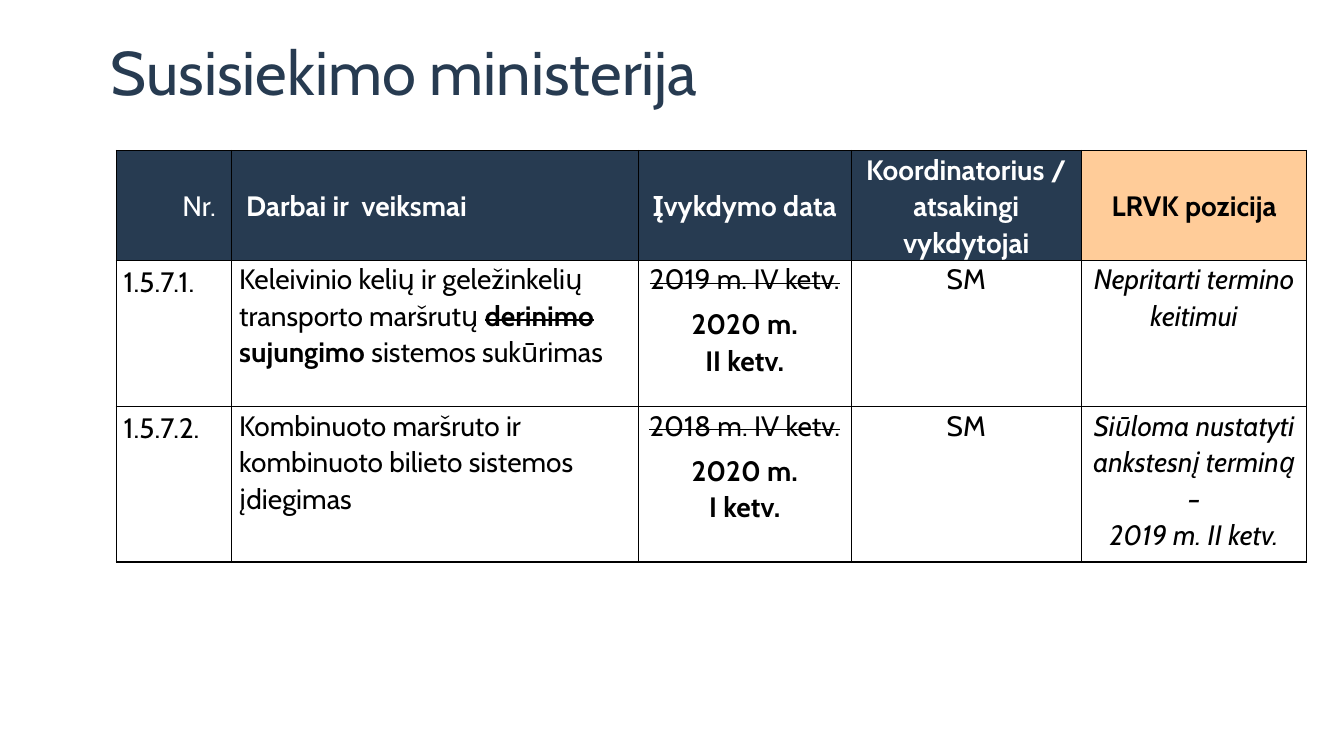
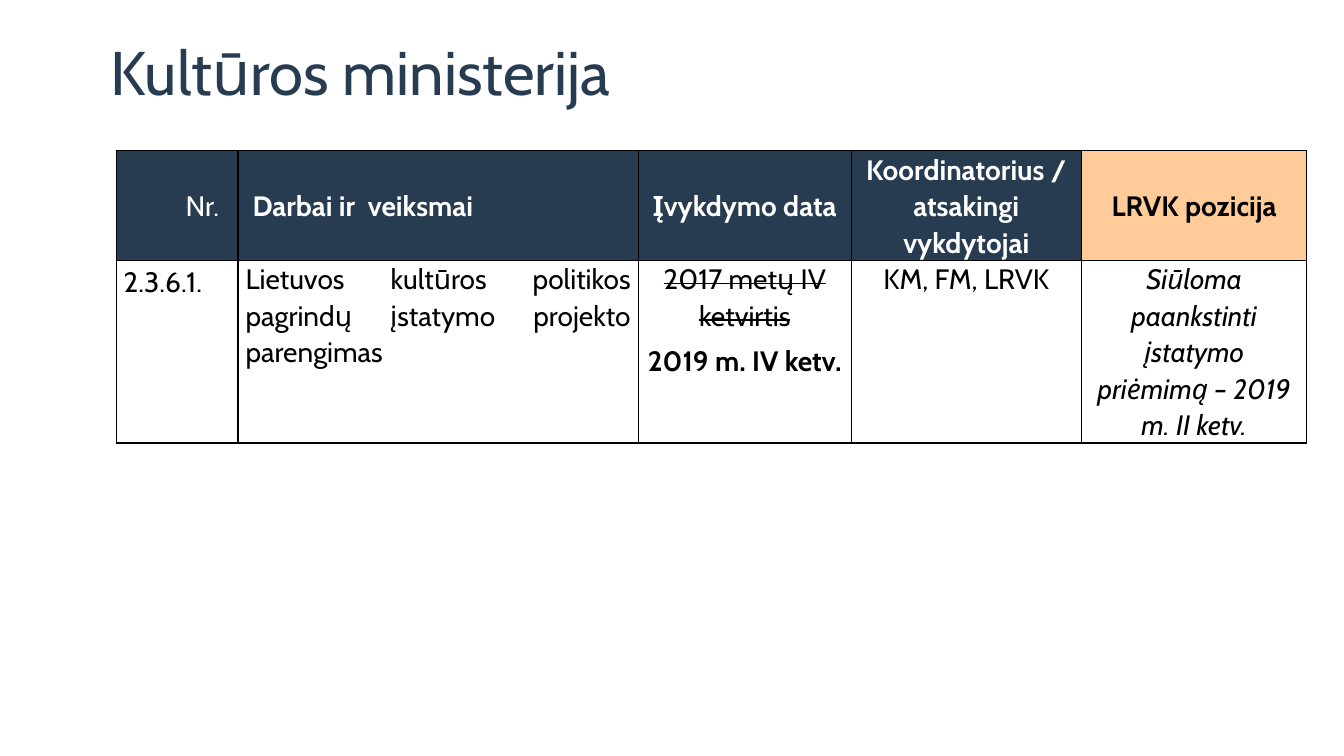
from lxml import etree
from pptx import Presentation
from pptx.dml.color import RGBColor
from pptx.enum.text import MSO_ANCHOR, MSO_AUTO_SIZE, PP_ALIGN
from pptx.oxml.ns import qn
from pptx.util import Pt

LEFT, CENTER, JUSTIFY = PP_ALIGN.LEFT, PP_ALIGN.CENTER, PP_ALIGN.JUSTIFY
TOP, MIDDLE = MSO_ANCHOR.TOP, MSO_ANCHOR.MIDDLE

# Shared style, lengths in points
FONT = "Cabin"
NAVY, PEACH, WHITE, BLACK = "273B51", "FFCC99", "FFFFFF", "000000"
TITLE_BOX = {"left": 72, "top": 22, "width": 816, "height": 64}
TITLE_SIZE, TEXT_SIZE = 44, 20
TABLE_LEFT, TABLE_TOP = 83, 107.5
HEADER_HEIGHT = 78.5
LAST_WIDTHS = [152, 164.5, 161]
CELL_MARGINS = {"margin_left": 5.4, "margin_right": 5.4,
                "margin_top": 0, "margin_bottom": 0}
BORDER_WIDTH = 1
LINE_SPACING, NUMBER_SPACING = 1.07, 1.15
PARAGRAPH_GAP = 6

# Run formats
PLAIN, BOLD, ITALIC = {}, {"bold": True}, {"italic": True}
STRUCK = {"strike": True}
BOLD_STRUCK = {"bold": True, "strike": True}

# Header cells: text, run format, alignment, indent, text colour, fill
HEADERS = [
    ("Nr.", PLAIN, CENTER, 36, WHITE, NAVY),
    ("Darbai ir  veiksmai", BOLD, LEFT, 5, WHITE, NAVY),
    ("Įvykdymo data", BOLD, CENTER, 0, WHITE, NAVY),
    ("Koordinatorius / atsakingi vykdytojai", BOLD, CENTER, 0, WHITE, NAVY),
    ("LRVK pozicija", BOLD, CENTER, 0, BLACK, PEACH),
]

# Body cells are lists of paragraphs, and paragraphs are lists of runs
SLIDES = [
    {
        "title": "Susisiekimo ministerija",
        "first_widths": [82.5, 290.5],
        "task_align": LEFT,
        "date_gap": 0,
        "rows": [
            (104.5, [
                [[("1.5.7.1.", PLAIN)]],
                [[("Keleivinio kelių ir geležinkelių transporto maršrutų ", PLAIN),
                  ("derinimo", BOLD_STRUCK),
                  (" sujungimo", BOLD),
                  (" sistemos sukūrimas", PLAIN)]],
                [[("2019 m. IV ketv.", STRUCK)],
                 [("2020 m.", BOLD)],
                 [("II ketv.", BOLD)]],
                [[("SM", PLAIN)]],
                [[("Nepritarti termino keitimui", ITALIC)]],
            ]),
            (111, [
                [[("1.5.7.2.", PLAIN)]],
                [[("Kombinuoto maršruto ir kombinuoto bilieto sistemos įdiegimas",
                   PLAIN)]],
                [[("2018 m. IV ketv.", STRUCK)],
                 [("2020 m.", BOLD)],
                 [("I ketv.", BOLD)]],
                [[("SM", PLAIN)]],
                [[("Siūloma nustatyti ankstesnį terminą –", ITALIC)],
                 [("2019 m. II ketv.", ITALIC)]],
            ]),
        ],
    },
    {
        "title": "Kultūros ministerija",
        "first_widths": [87, 286],
        "task_align": JUSTIFY,
        "rows": [
            (130.5, [
                [[("2.3.6.1.", PLAIN)]],
                [[("Lietuvos kultūros politikos pagrindų įstatymo projekto "
                   "parengimas", PLAIN)]],
                [[("2017 metų IV ketvirtis", STRUCK)],
                 [("2019 m. IV ketv.", BOLD)]],
                [[("KM, FM, LRVK", PLAIN)]],
                [[("Siūloma paankstinti įstatymo priėmimą – 2019 m. II ketv.",
                   ITALIC)]],
            ]),
        ],
    },
]


def color(hex_value):
    return RGBColor.from_string(hex_value)


def set_lengths(target, lengths):
    for name, value in lengths.items():
        setattr(target, name, Pt(value))


def add_run(paragraph, text, size, hex_value, run_format):
    run = paragraph.add_run()
    run.text = text
    run.font.name = FONT
    run.font.size = Pt(size)
    run.font.color.rgb = color(hex_value)
    for name in ("bold", "italic"):
        setattr(run.font, name, run_format.get(name, False))
    if run_format.get("strike"):
        run._r.get_or_add_rPr().set("strike", "sngStrike")


def add_title(slide, text):
    title = slide.shapes.title
    set_lengths(title, TITLE_BOX)
    frame = title.text_frame
    frame.word_wrap = True
    frame.auto_size = MSO_AUTO_SIZE.NONE
    frame.vertical_anchor = MIDDLE
    paragraph = frame.paragraphs[0]
    paragraph.alignment = LEFT
    paragraph.line_spacing = 0.9
    add_run(paragraph, text, TITLE_SIZE, NAVY, PLAIN)


def set_borders(cell):
    properties = cell._tc.get_or_add_tcPr()
    for index, side in enumerate(("lnL", "lnR", "lnT", "lnB")):
        line = etree.Element(qn(f"a:{side}"), w=str(Pt(BORDER_WIDTH)))
        fill = etree.SubElement(line, qn("a:solidFill"))
        etree.SubElement(fill, qn("a:srgbClr"), val=BLACK)
        properties.insert(index, line)


def fill_cell(cell, paragraphs, align, anchor=TOP, text_color=BLACK,
              background=None, spacing=LINE_SPACING, indent=0):
    set_lengths(cell, CELL_MARGINS)
    cell.vertical_anchor = anchor
    if background:
        cell.fill.solid()
        cell.fill.fore_color.rgb = color(background)
    else:
        cell.fill.background()
    set_borders(cell)
    frame = cell.text_frame
    for index, runs in enumerate(paragraphs):
        paragraph = frame.add_paragraph() if index else frame.paragraphs[0]
        paragraph.alignment = align
        paragraph.line_spacing = spacing
        # Only the struck-out date is set apart from the lines below it
        paragraph.space_after = Pt(PARAGRAPH_GAP if runs[0][1] is STRUCK else 0)
        if indent:
            paragraph._p.get_or_add_pPr().set("marL", str(Pt(indent)))
        for text, run_format in runs:
            add_run(paragraph, text, TEXT_SIZE, text_color, run_format)


def add_plan_table(slide, content):
    widths = content["first_widths"] + LAST_WIDTHS
    heights = [HEADER_HEIGHT] + [height for height, _ in content["rows"]]
    table = slide.shapes.add_table(
        len(heights), len(widths), Pt(TABLE_LEFT), Pt(TABLE_TOP),
        Pt(sum(widths)), Pt(sum(heights))).table
    table.first_row = table.horz_banding = False
    for column, width in zip(table.columns, widths):
        column.width = Pt(width)
    for row, height in zip(table.rows, heights):
        row.height = Pt(height)

    # Header row
    for index, header in enumerate(HEADERS):
        text, run_format, align, indent, text_color, background = header
        fill_cell(table.cell(0, index), [[(text, run_format)]], align, MIDDLE,
                  text_color, background, indent=indent)

    # Body rows
    aligns = [JUSTIFY, content["task_align"], CENTER, CENTER, CENTER]
    for row_index, (_, cells) in enumerate(content["rows"], start=1):
        for index, paragraphs in enumerate(cells):
            spacing = LINE_SPACING if index else NUMBER_SPACING
            fill_cell(table.cell(row_index, index), paragraphs, aligns[index],
                      spacing=spacing)


def main():
    presentation = Presentation()
    presentation.slide_width, presentation.slide_height = Pt(960), Pt(540)
    title_only = presentation.slide_layouts[5]
    for content in SLIDES:
        slide = presentation.slides.add_slide(title_only)
        add_title(slide, content["title"])
        add_plan_table(slide, content)
    presentation.save("out.pptx")


if __name__ == "__main__":
    main()
